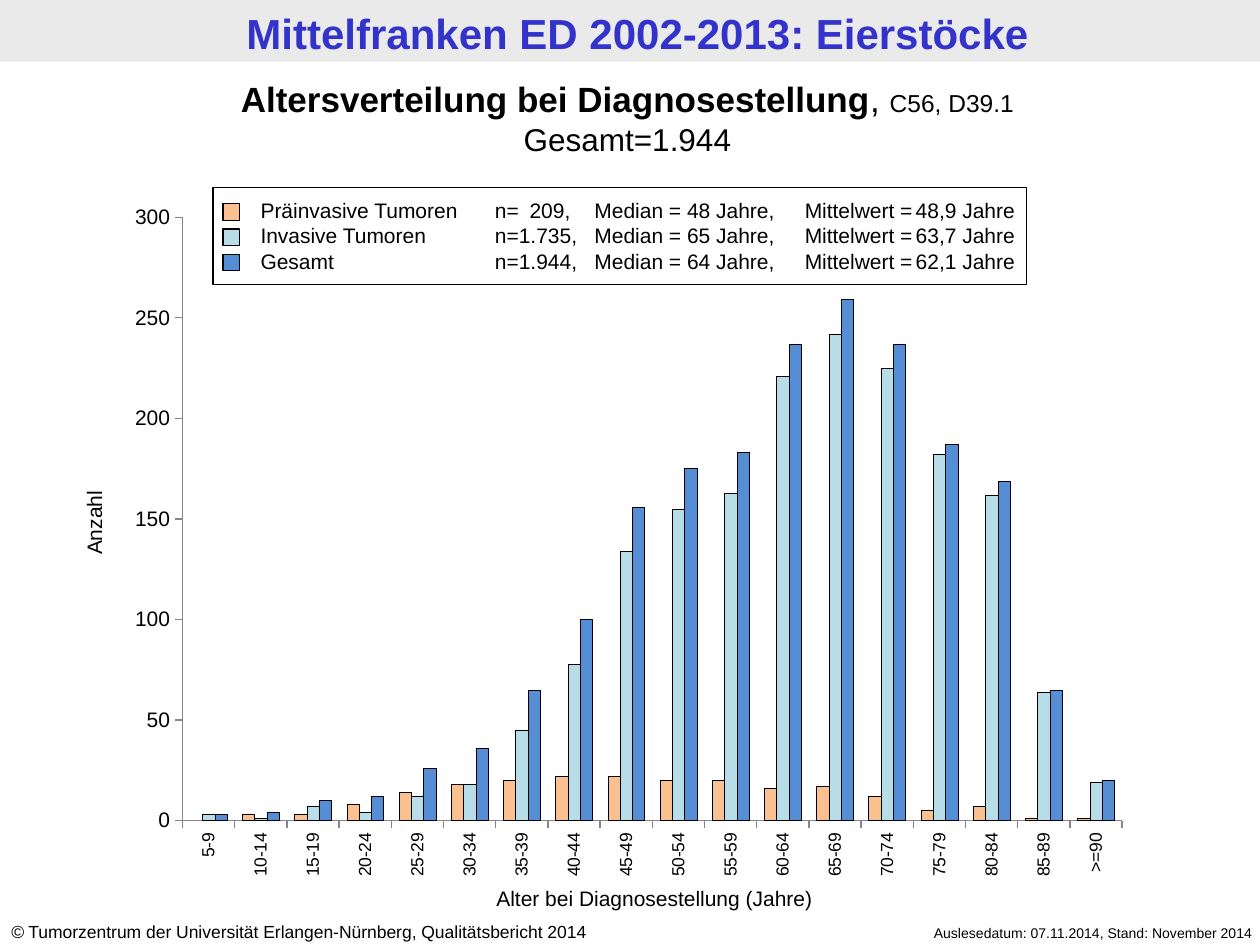
"""Build the slide on age distribution at diagnosis of ovarian tumours."""
from lxml import etree
from pptx import Presentation
from pptx.chart.data import CategoryChartData
from pptx.dml.color import RGBColor
from pptx.enum.chart import XL_CHART_TYPE as ChartType, XL_TICK_MARK as Tick
from pptx.enum.shapes import MSO_SHAPE as Shape
from pptx.enum.text import PP_ALIGN as Align
from pptx.oxml import parse_xml
from pptx.oxml.ns import nsdecls, qn
from pptx.util import Pt

BLACK = "000000"
COLORS = ["FAC090", "B7DEE8", "558ED5"]
AGES = [f"{a}-{a + 4}" for a in range(5, 90, 5)] + [">=90"]
COUNTS = [
    [None, 3, 3, 8, 14, 18, 20, 22, 22, 20, 20, 16, 17, 12, 5, 7, 1, 1],
    [3, 1, 7, 4, 12, 18, 45, 78, 134, 155, 163, 221, 242, 225, 182, 162, 64, 19],
    [3, 4, 10, 12, 26, 36, 65, 100, 156, 175, 183, 237, 259, 237, 187, 169, 65, 20],
]
LEGEND = [
    "Präinvasive Tumoren\tn=\t209,\tMedian = 48 Jahre,\tMittelwert =\t48,9 Jahre",
    "Invasive Tumoren \t\tn=\t1.735,\tMedian = 65 Jahre,\tMittelwert =\t63,7 Jahre",
    "Gesamt\t\tn=\t1.944,\tMedian = 64 Jahre,\tMittelwert =\t62,1 Jahre",
]
TABS = [(105.8, "l"), (133.9, "l"), (177.1, "r"), (190.8, "l"), (311, "l"), (374.4, "l")]


def rgb(color):
    return RGBColor.from_string(color)


def set_font(font, size, color=BLACK, bold=None, name="Arial"):
    font.name, font.size, font.bold = name, Pt(size), bold
    font.color.rgb = rgb(color)


def add_tabs(p, tabs):
    tab_list = etree.SubElement(p._p.get_or_add_pPr(), qn("a:tabLst"))
    for pos, align in tabs:
        etree.SubElement(tab_list, qn("a:tab"), pos=str(int(Pt(pos))), algn=align)


def add_text(slide, box, lines, size, align=Align.LEFT, color=BLACK, bold=None,
             tabs=(), rotation=0):
    sp = slide.shapes.add_textbox(*map(Pt, box))
    sp.rotation = rotation
    tf = sp.text_frame
    tf.word_wrap = True
    for i, line in enumerate(lines):
        p = tf.add_paragraph() if i else tf.paragraphs[0]
        p.alignment = align
        if tabs:
            add_tabs(p, tabs)
        set_font(p.font, size, color, bold)
        p.add_run().text = line
    return tf


def add_rect(slide, box, fill=None, line=None):
    sp = slide.shapes.add_shape(Shape.RECTANGLE, *map(Pt, box))
    sp.shadow.inherit = False
    if fill:
        sp.fill.solid()
        sp.fill.fore_color.rgb = rgb(fill)
    else:
        sp.fill.background()
    if line:
        sp.line.color.rgb = rgb(line)
        sp.line.width = Pt(0.75)
    else:
        sp.line.fill.background()


def add_heading(slide):
    tf = add_text(slide, (-2.9, 41, 722.9, 53.3),
                  ["Altersverteilung bei Diagnosestellung", "Gesamt=1.944"],
                  18, Align.CENTER)
    p = tf.paragraphs[0]
    set_font(p.font, 20)
    p.runs[0].font.bold = True
    p.add_run().text = ", "
    r = p.add_run()
    r.text = "C56, D39.1"
    r.font.size = Pt(14)


def style_axis(axis, size):
    axis.has_major_gridlines = False
    axis.major_tick_mark, axis.minor_tick_mark = Tick.OUTSIDE, Tick.NONE
    axis.format.line.color.rgb = rgb("868686")
    axis.format.line.width = Pt(0.75)
    set_font(axis.tick_labels.font, size)


def place_plot(chart, x, y, w, h):
    area = chart._chartSpace.chart.plotArea
    for old in area.findall(qn("c:layout")):
        area.remove(old)
    sizes = "".join(f'<c:{k} val="{v}"/>' for k, v in zip("xywh", (x, y, w, h)))
    area.insert(0, parse_xml(
        f'<c:layout {nsdecls("c")}><c:manualLayout><c:layoutTarget val="inner"/>'
        f'<c:xMode val="edge"/><c:yMode val="edge"/>{sizes}'
        '</c:manualLayout></c:layout>'))
    area.append(parse_xml(
        f'<c:spPr {nsdecls("c", "a")}><a:solidFill><a:srgbClr val="FFFFFF"/>'
        '</a:solidFill></c:spPr>'))


def add_age_chart(slide):
    data = CategoryChartData()
    data.categories = AGES
    for i, values in enumerate(COUNTS, 1):
        data.add_series(f"Series {i}", values)
    box = map(Pt, (65.5, 109.4, 587.5, 399.6))
    chart = slide.shapes.add_chart(ChartType.COLUMN_CLUSTERED, *box, data).chart
    chart.has_legend = chart.has_title = False
    set_font(chart.font, 18, name="Calibri")
    plot = chart.plots[0]
    plot.gap_width, plot.overlap, plot.vary_by_categories = 124, 0, False
    for series, color in zip(plot.series, COLORS):
        series.format.fill.solid()
        series.format.fill.fore_color.rgb = rgb(color)
        series.format.line.color.rgb = rgb(BLACK)
        series.format.line.width = Pt(0.25)
    style_axis(chart.category_axis, 10)
    style_axis(chart.value_axis, 12)
    labels = chart.category_axis._element.find(qn("c:txPr"))
    labels.find(qn("a:bodyPr")).set("rot", "-5400000")
    axis = chart.value_axis
    axis.minimum_scale, axis.maximum_scale, axis.major_unit = 0, 300, 50
    place_plot(chart, 0.066, 0.037, 0.914, 0.863)


def add_legend(slide):
    add_text(slide, (141.8, 109.4, 462.2, 51.1), LEGEND, 12, tabs=TABS)
    add_rect(slide, (121.7, 107.3, 465.1, 55.4), line=BLACK)
    for i, color in enumerate(COLORS):
        add_rect(slide, (127.4, 116.5 + 14.4 * i, 9.4, 9.4), color, BLACK)


def add_footer(slide):
    add_text(slide, (478.8, 524.9, 244.1, 17.3),
             ["Auslesedatum: 07.11.2014, Stand: November 2014"], 8, Align.RIGHT)
    tf = add_text(slide, (-0.7, 522.7, 377.3, 19.4), ["©"], 10)
    p = tf.paragraphs[0]
    p.runs[0].font.italic = True
    p.add_run().text = " Tumorzentrum der Universität Erlangen-Nürnberg, Qualitätsbericht 2014"


def main():
    prs = Presentation()
    prs.slide_width, prs.slide_height = Pt(720), Pt(540)
    slide = prs.slides.add_slide(prs.slide_layouts[6])
    add_rect(slide, (0, 0, 720, 35.3), "EAEAEA")
    add_text(slide, (4.3, 0.7, 720, 35.3), ["Mittelfranken ED 2002-2013: Eierstöcke"],
             24, Align.CENTER, "3333CC", True)
    add_footer(slide)
    add_heading(slide)
    add_age_chart(slide)
    add_text(slide, (263.5, 502.6, 221, 21.6), ["Alter bei Diagnosestellung (Jahre)"],
             12, Align.CENTER)
    add_text(slide, (-40.3, 288, 187.9, 21.6), ["Anzahl"], 12, Align.CENTER, rotation=270)
    add_legend(slide)
    prs.save("out.pptx")


if __name__ == "__main__":
    main()
